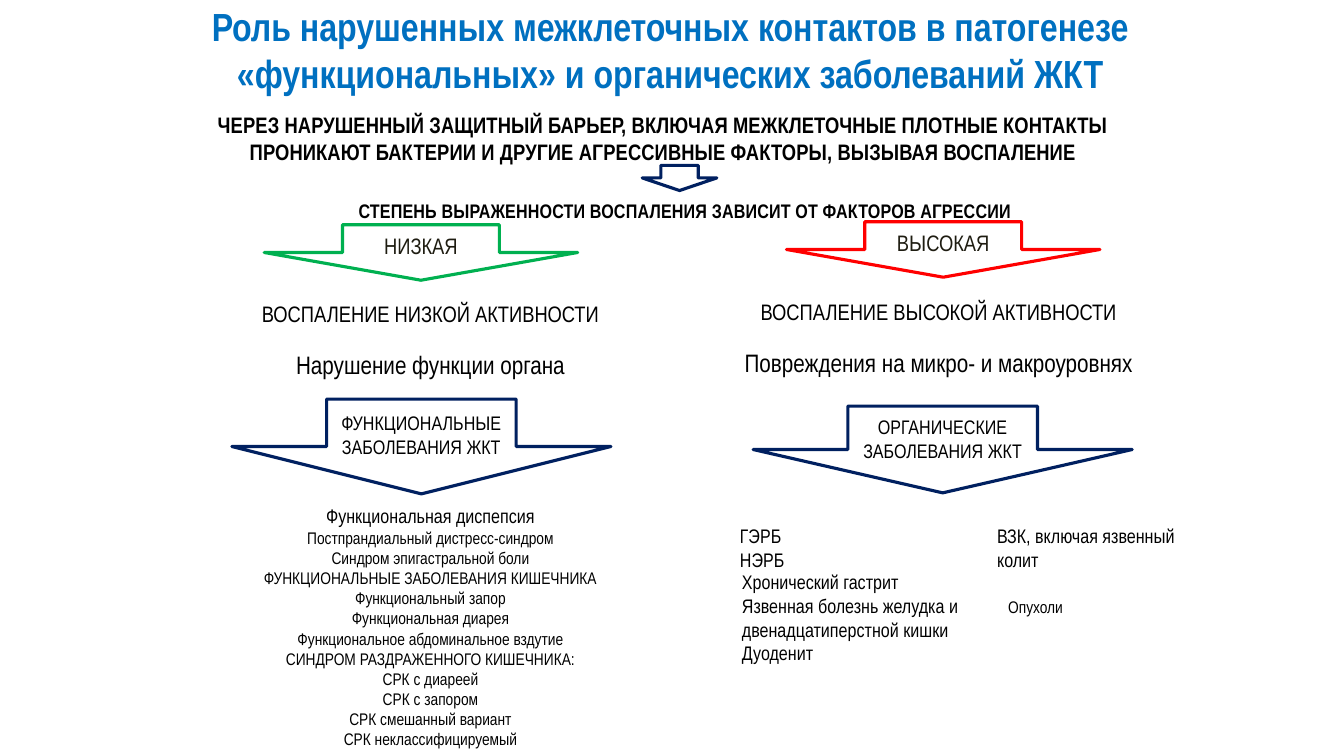
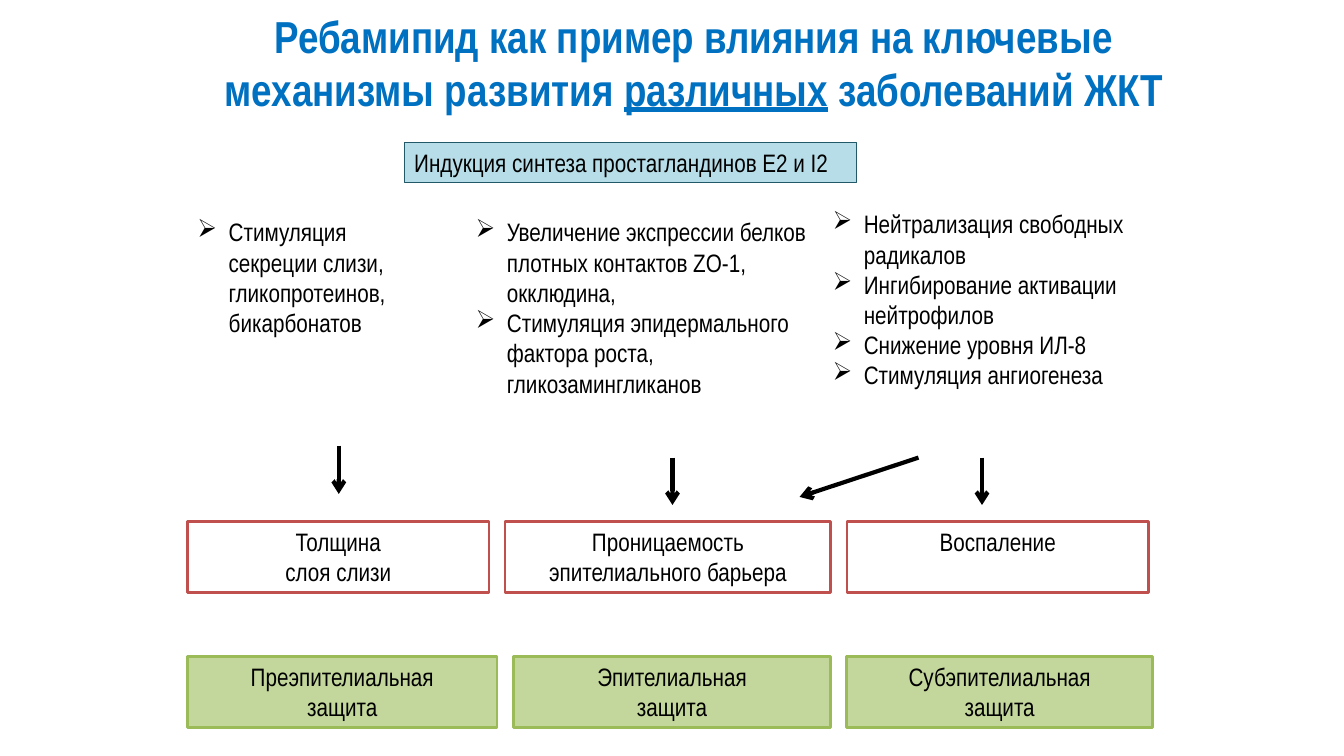
from lxml import etree
from pptx import Presentation
from pptx import util as u
from pptx.dml.color import RGBColor
from pptx.enum import shapes, text
from pptx.oxml.ns import qn

BLACK = RGBColor(0x00, 0x00, 0x00)
WHITE = RGBColor(0xFF, 0xFF, 0xFF)
TITLE_BLUE = RGBColor(0x00, 0x70, 0xC0)
NAVY = RGBColor(0x00, 0x20, 0x60)
GREEN = RGBColor(0x00, 0xB0, 0x50)
RED = RGBColor(0xFF, 0x00, 0x00)
DARK_OLIVE = RGBColor(0x1E, 0x1C, 0x11)
BRICK = RGBColor(0xC0, 0x50, 0x4D)
PALE_GREEN = RGBColor(0xC3, 0xD6, 0x9B)
LEAF = RGBColor(0x9B, 0xBB, 0x59)
PALE_TEAL = RGBColor(0xB7, 0xDE, 0xE8)
TEAL = RGBColor(0x21, 0x59, 0x68)

CENTER = text.PP_ALIGN.CENTER
LEFT = text.PP_ALIGN.LEFT
TOP = text.MSO_ANCHOR.TOP
MIDDLE = text.MSO_ANCHOR.MIDDLE
RECTANGLE = shapes.MSO_SHAPE.RECTANGLE
DOWN_ARROW = shapes.MSO_SHAPE.DOWN_ARROW


class Deck:
    font = "Arial Narrow"
    inset = (0.1, 0.05, 0.1, 0.05)

    def __init__(self):
        self.prs = Presentation()
        self.prs.slide_width = u.Inches(13.33)
        self.prs.slide_height = u.Inches(7.5)
        self.slide = None

    def new_slide(self):
        self.slide = self.prs.slides.add_slide(self.prs.slide_layouts[6])

    def add_run(self, paragraph, words, size, color, bold=False, underline=False, spacing=0):
        run = paragraph.add_run()
        run.text = words
        font = run.font
        font.name, font.size, font.bold = self.font, u.Pt(size), bold
        font.color.rgb = color
        if underline:
            font.underline = True
        if spacing:
            run._r.get_or_add_rPr().set("spc", str(spacing))

    def fill_text(self, shape, lines, size=18, color=BLACK, align=LEFT, anchor=TOP,
                  inset=inset, bullet=None, gap=0, wrap=True, **style):
        frame = shape.text_frame
        frame.word_wrap = wrap
        frame.vertical_anchor = anchor
        (frame.margin_left, frame.margin_top,
         frame.margin_right, frame.margin_bottom) = map(u.Inches, inset)
        for i, line in enumerate(lines):
            paragraph = frame.add_paragraph() if i else frame.paragraphs[0]
            paragraph.alignment = align
            if i and gap:
                paragraph.space_before = u.Pt(gap)
            if bullet:
                props = paragraph._p.get_or_add_pPr()
                props.set("marL", str(u.Inches(0.31)))
                props.set("indent", str(-u.Inches(0.31)))
                etree.SubElement(props, qn("a:buChar")).set("char", bullet)
            words, line_size = line if isinstance(line, tuple) else (line, size)
            pieces = [(words, False)] if isinstance(words, str) else words
            for piece, underline in pieces:
                self.add_run(paragraph, piece, line_size, color, underline=underline, **style)

    def label(self, at, lines, **style):
        self.fill_text(self.slide.shapes.add_textbox(*map(u.Inches, at)), lines, **style)

    def title(self, at, lines, size, **style):
        self.label(at, lines, size=size, color=TITLE_BLUE, align=CENTER, bold=True, **style)

    def shape(self, kind, at, line, width, fill=None, lines=(), **style):
        shape = self.slide.shapes.add_shape(kind, *map(u.Inches, at))
        shape.shadow.inherit = False
        shape.line.color.rgb = line
        shape.line.width = u.Pt(width)
        if fill is None:
            shape.fill.background()
        else:
            shape.fill.solid()
            shape.fill.fore_color.rgb = fill
        self.fill_text(shape, lines, **style)

    def block_arrow(self, at, line, lines=(), **style):
        self.shape(DOWN_ARROW, at, line, 2.25, lines=lines,
                   align=CENTER, anchor=MIDDLE, **style)

    def arrow(self, start, end):
        arrow = self.slide.shapes.add_connector(
            shapes.MSO_CONNECTOR.STRAIGHT, *map(u.Inches, start + end))
        arrow.line.color.rgb = BLACK
        arrow.line.width = u.Pt(3)
        etree.SubElement(arrow.line._get_or_add_ln(), qn("a:tailEnd")).set("type", "arrow")
        etree.SubElement(arrow._element.spPr, qn("a:effectLst"))


def pathogenesis(deck):
    deck.new_slide()
    deck.title((1.85, -0.03, 9.59, 1.04),
               ["Роль нарушенных межклеточных контактов в патогенезе",
                "«функциональных» и органических заболеваний ЖКТ"], 28)
    emphasis = dict(align=CENTER, bold=True, spacing=10)
    deck.label((1.87, 1.05, 9.42, 0.64),
               ["ЧЕРЕЗ НАРУШЕННЫЙ ЗАЩИТНЫЙ БАРЬЕР, ВКЛЮЧАЯ МЕЖКЛЕТОЧНЫЕ ПЛОТНЫЕ КОНТАКТЫ "
                "ПРОНИКАЮТ БАКТЕРИИ И ДРУГИЕ АГРЕССИВНЫЕ ФАКТОРЫ, ВЫЗЫВАЯ ВОСПАЛЕНИЕ"],
               size=16, **emphasis)
    deck.block_arrow((6.37, 1.64, 0.74, 0.25), NAVY)
    deck.label((2.85, 1.92, 7.89, 0.34),
               ["СТЕПЕНЬ ВЫРАЖЕННОСТИ ВОСПАЛЕНИЯ ЗАВИСИТ ОТ ФАКТОРОВ АГРЕССИИ"],
               size=14, **emphasis)

    for at, color, level in [((2.62, 2.23, 3.11, 0.55), GREEN, "НИЗКАЯ"),
                             ((7.8, 2.2, 3.11, 0.55), RED, "ВЫСОКАЯ")]:
        deck.block_arrow(at, color, [level], size=16, color=DARK_OLIVE)

    for at, activity, effect in [
            ((2.28, 2.97, 3.98, 0.81), "ВОСПАЛЕНИЕ НИЗКОЙ АКТИВНОСТИ",
             "Нарушение функции органа"),
            ((7.19, 2.95, 4.24, 0.81), "ВОСПАЛЕНИЕ ВЫСОКОЙ АКТИВНОСТИ",
             "Повреждения на микро- и макроуровнях")]:
        deck.label(at, [(activity, 16), (effect, 18)], align=CENTER,
                   inset=(0, 0.01, 0, 0), gap=16)

    for at, group in [((2.3, 3.96, 3.76, 0.94), ["ФУНКЦИОНАЛЬНЫЕ ЗАБОЛЕВАНИЯ ЖКТ"]),
                      ((7.47, 4.03, 3.76, 0.86), ["ОРГАНИЧЕСКИЕ", "ЗАБОЛЕВАНИЯ ЖКТ"])]:
        deck.block_arrow(at, NAVY, group, size=14)

    deck.label((1.48, 4.95, 5.58, 2.66),
               [("Функциональная диспепсия", 14),
                "Постпрандиальный дистресс-синдром",
                "Синдром эпигастральной боли",
                "ФУНКЦИОНАЛЬНЫЕ ЗАБОЛЕВАНИЯ КИШЕЧНИКА",
                "Функциональный запор",
                "Функциональная диарея",
                "Функциональное абдоминальное вздутие",
                "СИНДРОМ РАЗДРАЖЕННОГО КИШЕЧНИКА:",
                "СРК с диареей",
                "СРК с запором",
                "СРК смешанный вариант",
                "СРК неклассифицируемый"], size=12, align=CENTER)

    deck.label((7.24, 5.15, 2.99, 0.57), ["ГЭРБ", "НЭРБ"], size=14)
    deck.label((7.26, 5.61, 2.99, 1.04),
               ["Хронический гастрит",
                "Язвенная болезнь желудка и двенадцатиперстной кишки",
                "Дуоденит"], size=14)
    deck.label((9.79, 5.15, 2.01, 0.57), ["ВЗК, включая язвенный колит"], size=14)
    deck.label((9.9, 5.87, 0.75, 0.3), ["Опухоли"], size=12, wrap=False)


def rebamipide(deck):
    deck.new_slide()
    deck.title((1.64, -0.01, 10.49, 1.25),
               [([("Ребамипид как пример влияния на ключевые механизмы развития ", False),
                  ("различных", True),
                  (" заболеваний ЖКТ", False)], 32)],
               32, anchor=MIDDLE, inset=(0, 0, 0, 0))
    deck.shape(RECTANGLE, (4.01, 1.41, 4.49, 0.4), TEAL, 0.75, PALE_TEAL,
               ["Индукция синтеза простагландинов E2 и I2"])

    for at, actions in [
            ((1.86, 2.1, 2.52, 1.92),
             ["Стимуляция секреции слизи, гликопротеинов, бикарбонатов"]),
            ((4.62, 2.1, 3.62, 2.52),
             ["Увеличение экспрессии белков плотных контактов ZO-1, окклюдина,",
              "Стимуляция эпидермального фактора роста, гликозамингликанов"]),
            ((8.16, 2.02, 3.5, 2.22),
             ["Нейтрализация свободных радикалов",
              "Ингибирование активации нейтрофилов",
              "Снижение уровня ИЛ-8",
              "Стимуляция ангиогенеза"])]:
        deck.label(at, actions, bullet="➢")

    for start, end in [((3.36, 4.42), (3.36, 4.9)),
                       ((6.67, 4.54), (6.67, 5.01)),
                       ((9.74, 4.54), (9.74, 5.01)),
                       ((9.11, 4.54), (7.93, 4.93))]:
        deck.arrow(start, end)

    targets = [(1.86, 2.99, ["Толщина", "слоя слизи"]),
               (5.01, 3.23, ["Проницаемость", "эпителиального барьера"]),
               (8.4, 2.99, ["Воспаление"])]
    defences = [(1.86, 3.07, ["Преэпителиальная", "защита"]),
                (5.09, 3.15, ["Эпителиальная", "защита"]),
                (8.4, 3.03, ["Субэпителиальная", "защита"])]
    for top, line, fill, row in [(5.17, BRICK, WHITE, targets),
                                 (6.51, LEAF, PALE_GREEN, defences)]:
        for left, width, words in row:
            deck.shape(RECTANGLE, (left, top, width, 0.71), line, 2, fill, words, align=CENTER)


def main():
    deck = Deck()
    pathogenesis(deck)
    rebamipide(deck)
    deck.prs.save("out.pptx")


if __name__ == "__main__":
    main()
